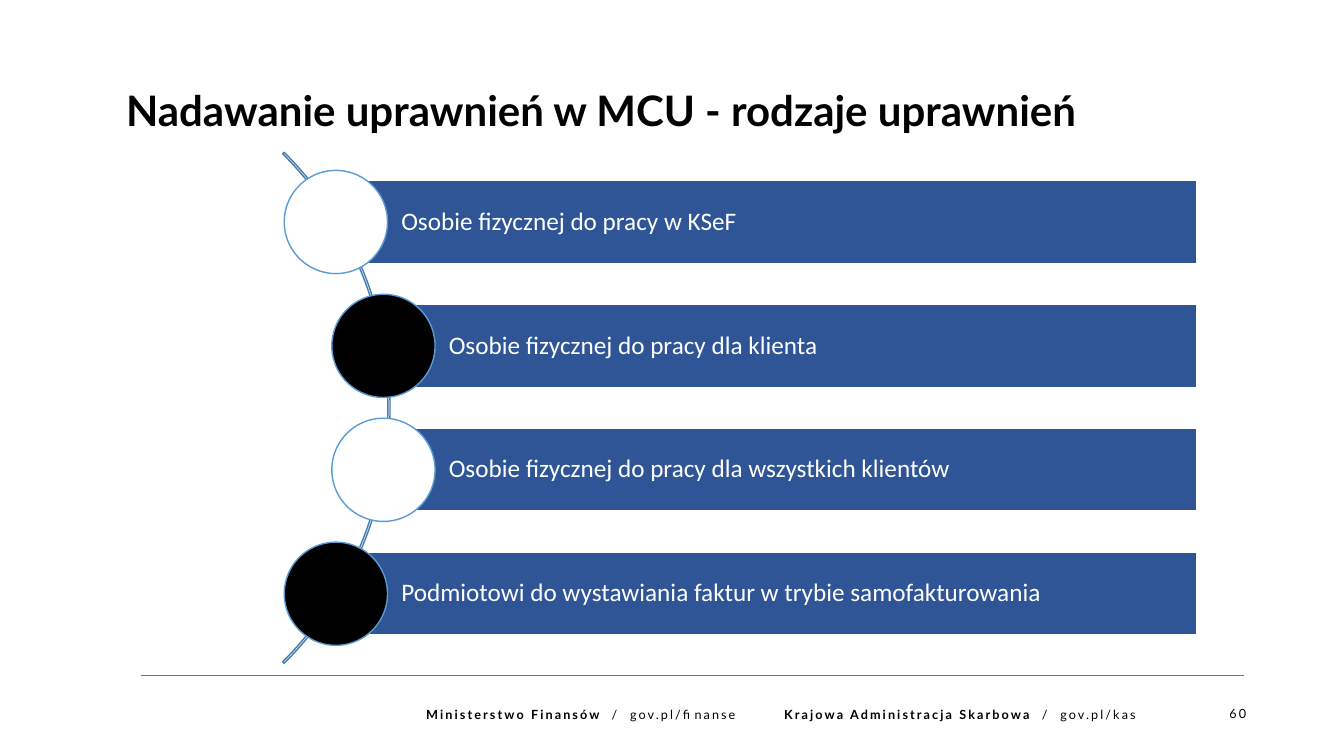
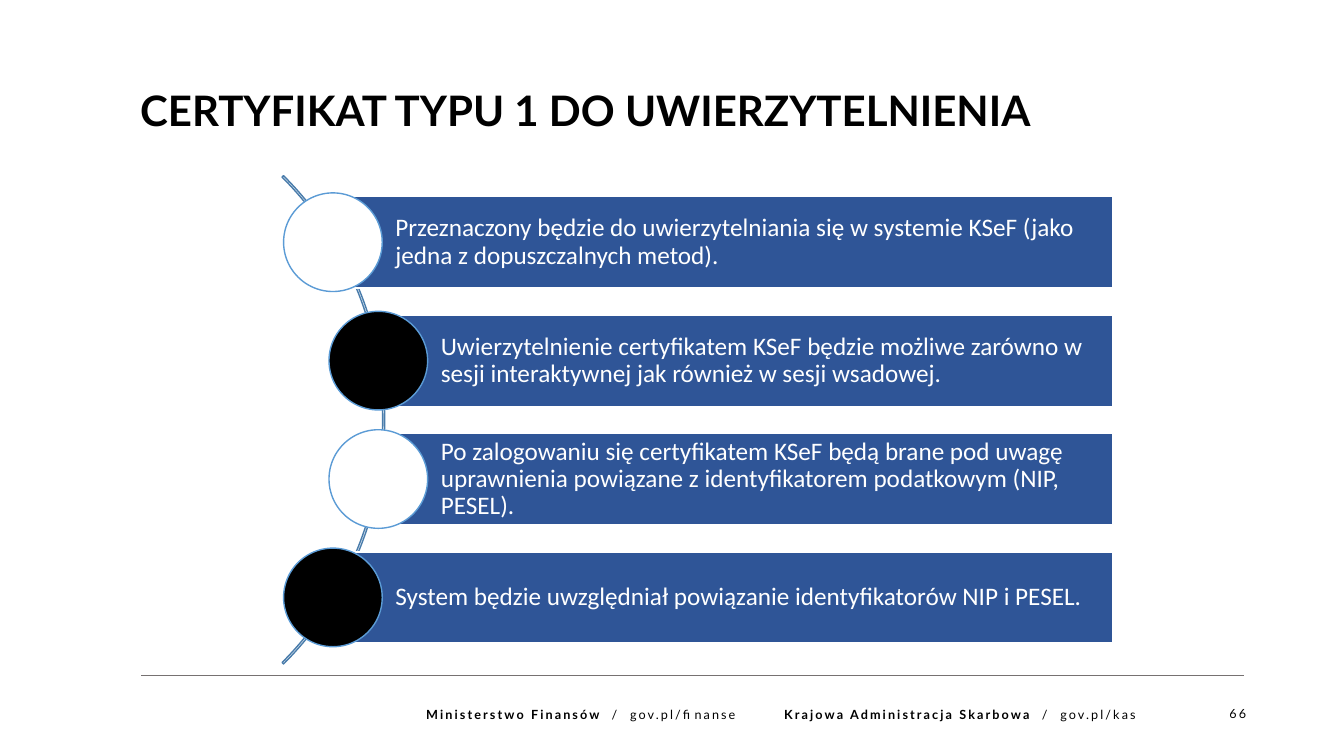
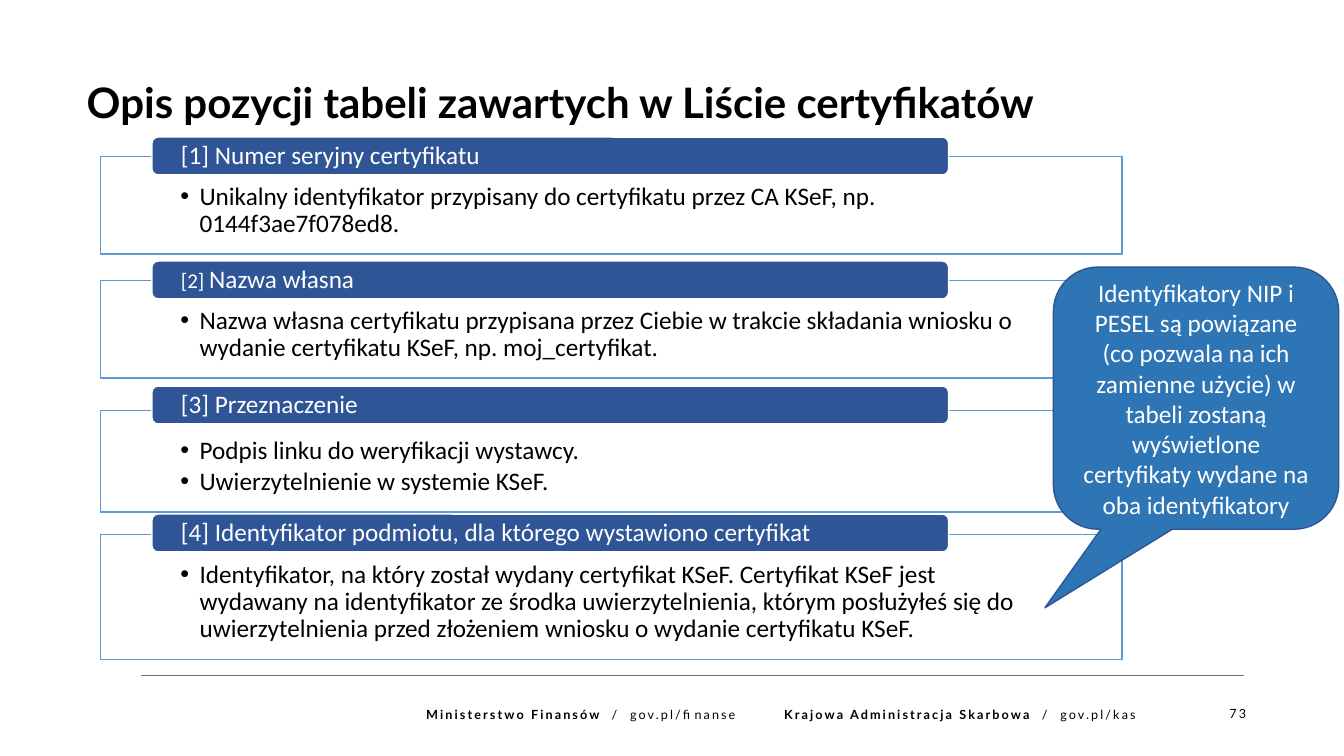
from collections import namedtuple
from math import sqrt

from lxml import etree
from pptx import Presentation
from pptx import util as u
from pptx.dml.color import RGBColor
from pptx.enum import shapes, text
from pptx.oxml.ns import qn

W, H = u.Inches(13.33), u.Inches(7.5)
COLORS = {
    "black": "000000", "white": "FFFFFF", "navy": "2F5597", "callout": "2E75B6",
    "outline": "5B9BD5", "arc": "497CAB", "rule": "767171",
}
TITLE = {"name": "Lato", "size": 30, "bold": True, "color": "black"}
FOOTER = {"name": "Lato", "size": 9, "bold": False, "color": "black"}
LIGHT = {"name": "Calibri", "size": 18, "color": "white"}
DARK = {**LIGHT, "color": "black"}
NO_INSET = (0, 0, 0, 0)
SHAPE, ALIGN, ANCHOR = shapes.MSO_SHAPE, text.PP_ALIGN, text.MSO_ANCHOR

Box = namedtuple("Box", "left top width height")


def share(left, top, width, height):
    """Turn percentages of the slide into a box."""
    return Box(int(W * left / 100), int(H * top / 100),
               int(W * width / 100), int(H * height / 100))


def rgb(name):
    """Look up a colour of the palette."""
    return RGBColor.from_string(COLORS[name])


def style(r, fmt):
    """Apply a dict of font values to a run."""
    for key, value in fmt.items():
        if key == "color":
            r.font.color.rgb = rgb(value)
        else:
            setattr(r.font, key, u.Pt(value) if key == "size" else value)


def write(tf, paragraphs, fmt, inset=None, anchor=ANCHOR.MIDDLE, **para):
    """Fill a text frame; each paragraph is a list of (text, overrides)."""
    frame = {"word_wrap": True, "auto_size": text.MSO_AUTO_SIZE.NONE,
             "vertical_anchor": anchor}
    if inset:
        sides = ("margin_left", "margin_top", "margin_right", "margin_bottom")
        frame.update(zip(sides, map(int, inset)))
    for key, value in frame.items():
        setattr(tf, key, value)
    for i, runs in enumerate(paragraphs):
        p = tf.add_paragraph() if i else tf.paragraphs[0]
        for key, value in {"alignment": ALIGN.LEFT, **para}.items():
            setattr(p, key, value)
        for words, extra in runs:
            r = p.add_run()
            r.text = words
            style(r, {**fmt, **extra})


def draw(s, kind, box, fill=None, line=None, adj=()):
    """Add a preset shape with a flat fill and a one-point outline."""
    sp = s.shapes.add_shape(kind, *map(int, box))
    sp.shadow.inherit = False
    if fill:
        sp.fill.solid()
        sp.fill.fore_color.rgb = rgb(fill)
    else:
        sp.fill.background()
    sp.line.color.rgb = rgb(line)
    sp.line.width = u.Pt(1)
    for i, value in enumerate(adj):
        sp.adjustments[i] = value
    return sp


def footer_text(s, box, runs, align, tab=None):
    """Write one letter-spaced piece of the footer."""
    tf = s.shapes.add_textbox(*box).text_frame
    p = tf.paragraphs[0]
    if tab:
        tabs = etree.SubElement(p._p.get_or_add_pPr(), qn("a:tabLst"))
        etree.SubElement(tabs, qn("a:tab"), pos=str(tab), algn="l")
    write(tf, [runs], FOOTER, anchor=ANCHOR.TOP, alignment=align, line_spacing=0.9)
    for r in p.runs:
        r._r.get_or_add_rPr().set("spc", "150")


def base_slide(prs, title, box, number):
    """Start a slide with its title, footer rule, footer and number."""
    s = prs.slides.add_slide(prs.slide_layouts[5])
    sp = s.shapes.title
    sp.left, sp.top, sp.width, sp.height = box
    write(sp.text_frame, [[(title, {})]], TITLE)
    rule = share(10.5, 89.33, 82.05, 0)
    line = s.shapes.add_connector(shapes.MSO_CONNECTOR.STRAIGHT, rule.left, rule.top,
                                  rule.left + rule.width, rule.top)
    line.line.color.rgb = rgb("rule")
    line.line.width = u.Pt(0.5)
    etree.SubElement(line._element.spPr, qn("a:effectLst"))
    bold = {"bold": True}
    footer_text(s, share(30.98, 93.07, 58, 2.93), [
        ("Ministerstwo Finansów  ", bold), ("/  gov.pl/finanse", {}),
        ("\tKrajowa Administracja Skarbowa  ", bold), ("/  gov.pl/kas", {}),
    ], ALIGN.LEFT, tab=u.Inches(3.55))
    footer_text(s, share(89.63, 92.93, 3.83, 2.93), [(str(number), {})], ALIGN.RIGHT)
    return s


def curved_list(s, box, bar_share, items):
    """Hang bars with circles on a quarter arc as tall as the box."""
    size = box.height * sqrt(2)
    middle = box.top + box.height / 2
    draw(s, SHAPE.BLOCK_ARC,
         Box(box.left - (box.height + size) / 2, middle - size / 2, size, size),
         line="arc", adj=(189, 27, 0.003))
    pitch, dot, bar = (box.height * k for k in (0.2425, 0.202, bar_share))
    pad = u.Inches(0.05)
    last = len(items) - 1
    for i, item in enumerate(items):
        y = middle + (i - last / 2) * pitch
        x = box.left + (0 if i in (0, last) else 0.093 * box.height)
        start = x + dot / 2
        sp = draw(s, SHAPE.RECTANGLE,
                  Box(start, y - bar / 2, box.left + box.width - start, bar),
                  "navy", "white")
        write(sp.text_frame, [[(item, {})]], LIGHT,
              (0.128 * box.height, pad, pad, pad), line_spacing=0.9)
        draw(s, SHAPE.OVAL, Box(x, y - dot / 2, dot, dot),
             ("white", "black")[i % 2], "outline")


def bullet(p):
    """Give a paragraph a hanging round bullet."""
    pPr = p._p.get_or_add_pPr()
    indent = u.Inches(0.19)
    pPr.set("marL", str(indent))
    pPr.set("indent", str(-indent))
    etree.SubElement(pPr, qn("a:buFont"), typeface="Arial")
    etree.SubElement(pPr, qn("a:buChar"), char="•")


def section(s, box, label_top, label, items):
    """Draw a framed bullet list with a label on its upper edge."""
    sp = draw(s, SHAPE.RECTANGLE, box, "white", "outline")
    tf = sp.text_frame
    write(tf, [[(item, {})] for item in items], DARK,
          [u.Inches(k) for k in (0.79, 0.27, 0.79, 0.14)], ANCHOR.TOP,
          line_spacing=0.9, space_after=u.Pt(2.7))
    for p in tf.paragraphs:
        bullet(p)
    tab = Box(box.left + 0.05 * box.width, label_top, 0.78 * box.width, 0.05 * H)
    sp = draw(s, SHAPE.ROUNDED_RECTANGLE, tab, "navy", "white")
    side = u.Inches(0.27)
    write(sp.text_frame, [label], LIGHT, (side, 0, side, 0), line_spacing=0.9)


def callout(s, box, words):
    """Draw the speech bubble pointing down to the left."""
    sp = draw(s, SHAPE.ROUNDED_RECTANGULAR_CALLOUT, box, "callout", "navy",
              (-0.53, 0.8, 0.17))
    write(sp.text_frame, [[(words, {})]], LIGHT, alignment=ALIGN.CENTER)


def main():
    """Build the three slides."""
    prs = Presentation()
    prs.slide_width, prs.slide_height = W, H

    s = base_slide(prs, "Nadawanie uprawnień w MCU - rodzaje uprawnień",
                   share(8.63, 10.4, 74.4, 8.13), 60)
    curved_list(s, share(21.15, 20.15, 67.88, 67.6), 0.162, [
        "Osobie fizycznej do pracy w KSeF",
        "Osobie fizycznej do pracy dla klienta",
        "Osobie fizycznej do pracy dla wszystkich klientów",
        "Podmiotowi do wystawiania faktur w trybie samofakturowania",
    ])

    s = base_slide(prs, "CERTYFIKAT TYPU 1 DO UWIERZYTELNIENIA",
                   share(9.68, 10.4, 73.35, 8.13), 66)
    curved_list(s, share(21.1, 23.24, 61.73, 64.59), 0.187, [
        "Przeznaczony będzie do uwierzytelniania się w systemie KSeF (jako jedna z "
        "dopuszczalnych metod).",
        "Uwierzytelnienie certyfikatem KSeF będzie możliwe zarówno w sesji "
        "interaktywnej jak również w sesji wsadowej.",
        "Po zalogowaniu się certyfikatem KSeF będą brane pod uwagę uprawnienia "
        "powiązane z identyfikatorem podatkowym (NIP, PESEL).",
        "System będzie uwzględniał powiązanie identyfikatorów NIP i PESEL.",
    ])

    s = base_slide(prs, "Opis pozycji tabeli zawartych w Liście certyfikatów",
                   share(5.7, 9.33, 76.9, 8.13), 73)
    sections = [
        (18.13, 20.67, 12.93, [("[1] Numer seryjny certyfikatu", {})],
         ["Unikalny identyfikator przypisany do certyfikatu przez CA KSeF, np. "
          "0144f3ae7f078ed8."]),
        (34.53, 37.07, 12.93, [("[2] ", {"size": 15}), ("Nazwa własna", {})],
         ["Nazwa własna certyfikatu przypisana przez Ciebie w trakcie składania "
          "wniosku o wydanie certyfikatu KSeF, np. moj_certyfikat."]),
        (51.07, 54.27, 13.47, [("[3] Przeznaczenie", {})],
         ["Podpis linku do weryfikacji wystawcy.",
          "Uwierzytelnienie w systemie KSeF."]),
        (68, 70.67, 16.53,
         [("[4] Identyfikator podmiotu, dla którego wystawiono certyfikat", {})],
         ["Identyfikator, na który został wydany certyfikat KSeF. Certyfikat KSeF "
          "jest wydawany na identyfikator ze środka uwierzytelnienia, którym "
          "posłużyłeś się do uwierzytelnienia przed złożeniem wniosku o wydanie "
          "certyfikatu KSeF."]),
    ]
    for label_top, top, height, label, items in sections:
        section(s, share(7.5, top, 76, height), H * label_top / 100, label, items)
    callout(s, share(78.38, 35.33, 21.23, 34.67),
            "Identyfikatory NIP i PESEL są powiązane (co pozwala na ich zamienne "
            "użycie) w tabeli zostaną wyświetlone certyfikaty wydane na oba "
            "identyfikatory")
    prs.save("out.pptx")


if __name__ == "__main__":
    main()
